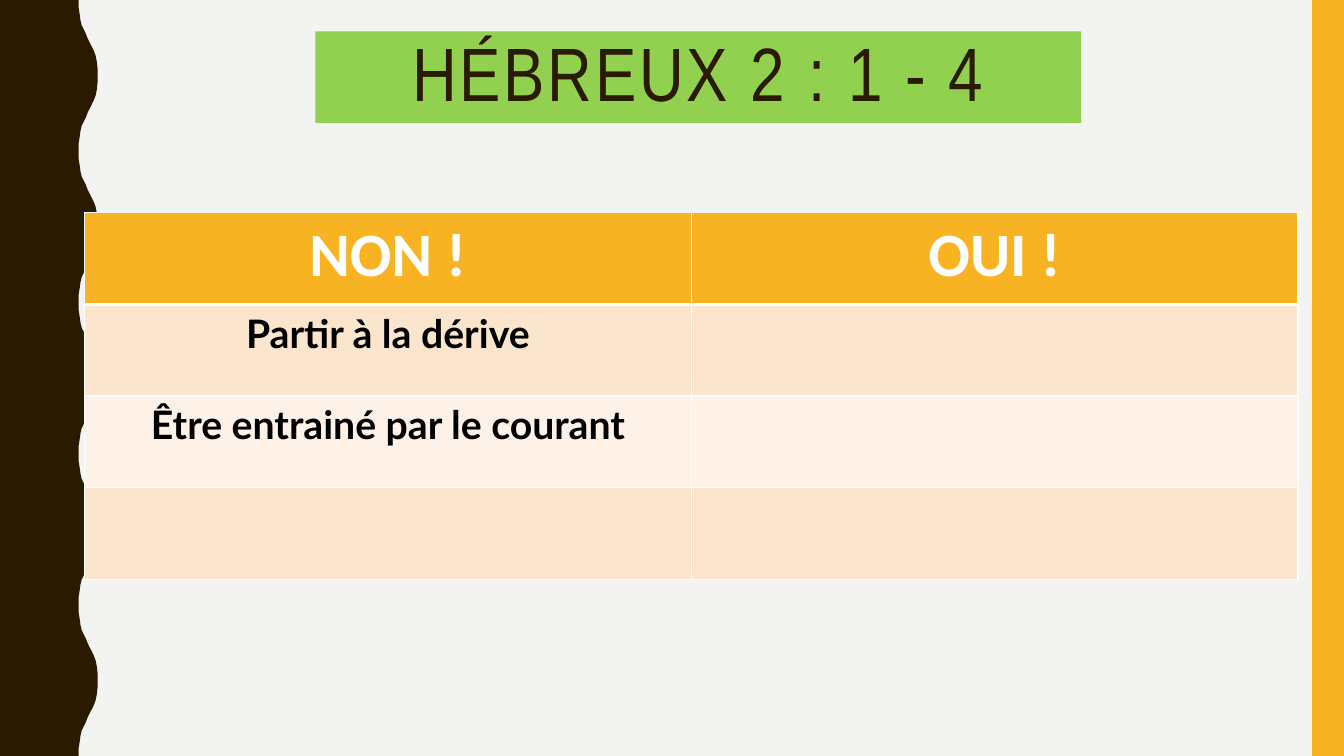
from dataclasses import dataclass

import lxml.etree
import pptx
import pptx.dml.color
import pptx.enum.shapes
import pptx.enum.text
import pptx.oxml.ns
import pptx.shapes.autoshape
import pptx.slide
import pptx.table
import pptx.text.text
import pptx.util

Cm = pptx.util.Cm

COLORS = {
    "paper": "F3F3F2",
    "brown": "2A1A00",
    "amber": "F8B323",
    "green": "92D050",
    "white": "FFFFFF",
    "black": "000000",
    "peach": "FCE5CD",
    "cream": "FEF2E8",
}
SLIDE_WIDTH, SLIDE_HEIGHT = 33.87, 19.05
WAVE_COUNT = 5
WAVE_PERIOD = SLIDE_HEIGHT / WAVE_COUNT
HALF_WAVE = [
    (1.98, 0), (1.98, 0.18), (2.01, 0.36), (2.03, 0.51), (2.06, 0.64),
    (2.11, 0.74), (2.16, 0.84), (2.21, 0.97), (2.26, 1.07), (2.31, 1.17),
    (2.36, 1.27), (2.41, 1.4), (2.44, 1.55), (2.46, 1.73), (2.46, 1.9),
]


@dataclass(frozen=True)
class Band:
    left: float
    top: float
    width: float
    height: float
    color: str


@dataclass(frozen=True)
class TextStyle:
    font: str
    size: int
    color: str
    bold: bool = False


@dataclass(frozen=True)
class TableRow:
    texts: tuple[str, str]
    fill: str
    style: TextStyle
    top_border: int = 1
    bottom_border: int = 1


RIGHT_BAR = Band(33.07, 0, 0.8, SLIDE_HEIGHT, "amber")
TITLE_BAND = Band(7.95, 0.79, 19.3, 2.31, "green")
TITLE_STYLE = TextStyle("Arial Narrow", 54, "brown")
HEADING_STYLE = TextStyle("Calibri", 44, "white", True)
ANSWER_STYLE = TextStyle("Lato", 28, "black", True)
ROWS = [
    TableRow(("NON !", "OUI !"), "amber", HEADING_STYLE, bottom_border=3),
    TableRow(("Partir à la dérive", ""), "peach", ANSWER_STYLE, top_border=3),
    TableRow(("Être entrainé par le courant", ""), "cream", ANSWER_STYLE),
    TableRow(("", ""), "peach", ANSWER_STYLE),
]
COLUMN_WIDTH, ROW_HEIGHT = 15.29, 2.31


def rgb(name: str) -> pptx.dml.color.RGBColor:
    return pptx.dml.color.RGBColor.from_string(COLORS[name])


def paint(shape: pptx.shapes.autoshape.Shape, color: str) -> None:
    shape.shadow.inherit = False
    shape.fill.solid()
    shape.fill.fore_color.rgb = rgb(color)
    shape.line.fill.background()


def write(paragraph: pptx.text.text._Paragraph, text: str, style: TextStyle) -> None:
    paragraph.text = text
    paragraph.alignment = pptx.enum.text.PP_ALIGN.CENTER
    for run in paragraph.runs:
        run.font.name = style.font
        run.font.size = pptx.util.Pt(style.size)
        run.font.bold = style.bold
        run.font.color.rgb = rgb(style.color)


def add_band(slide: pptx.slide.Slide, band: Band) -> pptx.shapes.autoshape.Shape:
    shape = slide.shapes.add_shape(
        pptx.enum.shapes.MSO_SHAPE.RECTANGLE,
        Cm(band.left), Cm(band.top), Cm(band.width), Cm(band.height),
    )
    paint(shape, band.color)
    return shape


def add_wavy_edge(slide: pptx.slide.Slide) -> None:
    mirrored = [(x, WAVE_PERIOD - y) for x, y in reversed(HALF_WAVE[:-1])]
    wave = HALF_WAVE + mirrored
    edge = [
        (Cm(x), Cm(y + index * WAVE_PERIOD))
        for index in range(WAVE_COUNT)
        for x, y in wave
    ]
    builder = slide.shapes.build_freeform(0, 0)
    builder.add_line_segments(edge + [(0, Cm(SLIDE_HEIGHT))], close=True)
    paint(builder.convert_to_shape(), "brown")


def add_title(slide: pptx.slide.Slide) -> None:
    frame = add_band(slide, TITLE_BAND).text_frame
    frame.word_wrap = True
    frame.vertical_anchor = pptx.enum.text.MSO_ANCHOR.MIDDLE
    paragraph = frame.paragraphs[0]
    write(paragraph, "HÉBREUX 2 : 1 - 4", TITLE_STYLE)
    paragraph.line_spacing = 0.9
    paragraph.runs[0].font._element.set("spc", "200")


def add_borders(cell: pptx.table._Cell, row: TableRow) -> None:
    properties = cell._tc.get_or_add_tcPr()
    widths = {"lnL": 1, "lnR": 1, "lnT": row.top_border, "lnB": row.bottom_border}
    qn = pptx.oxml.ns.qn
    for side, width in widths.items():
        line = lxml.etree.SubElement(
            properties, qn(f"a:{side}"), w=str(pptx.util.Pt(width))
        )
        fill = lxml.etree.SubElement(line, qn("a:solidFill"))
        lxml.etree.SubElement(fill, qn("a:srgbClr"), val=COLORS["white"])


def add_comparison(slide: pptx.slide.Slide) -> None:
    table = slide.shapes.add_table(
        len(ROWS), 2, Cm(2.13), Cm(5.36),
        Cm(2 * COLUMN_WIDTH), Cm(len(ROWS) * ROW_HEIGHT),
    ).table
    for column in table.columns:
        column.width = Cm(COLUMN_WIDTH)
    for table_row, row in zip(table.rows, ROWS):
        table_row.height = Cm(ROW_HEIGHT)
        for cell, text in zip(table_row.cells, row.texts):
            add_borders(cell, row)
            cell.fill.solid()
            cell.fill.fore_color.rgb = rgb(row.fill)
            if text:
                write(cell.text_frame.paragraphs[0], text, row.style)


def main() -> None:
    deck = pptx.Presentation()
    deck.slide_width = Cm(SLIDE_WIDTH)
    deck.slide_height = Cm(SLIDE_HEIGHT)
    slide = deck.slides.add_slide(deck.slide_layouts[6])
    slide.background.fill.solid()
    slide.background.fill.fore_color.rgb = rgb("paper")
    add_wavy_edge(slide)
    add_band(slide, RIGHT_BAR)
    add_title(slide)
    add_comparison(slide)
    deck.save("out.pptx")


if __name__ == "__main__":
    main()
